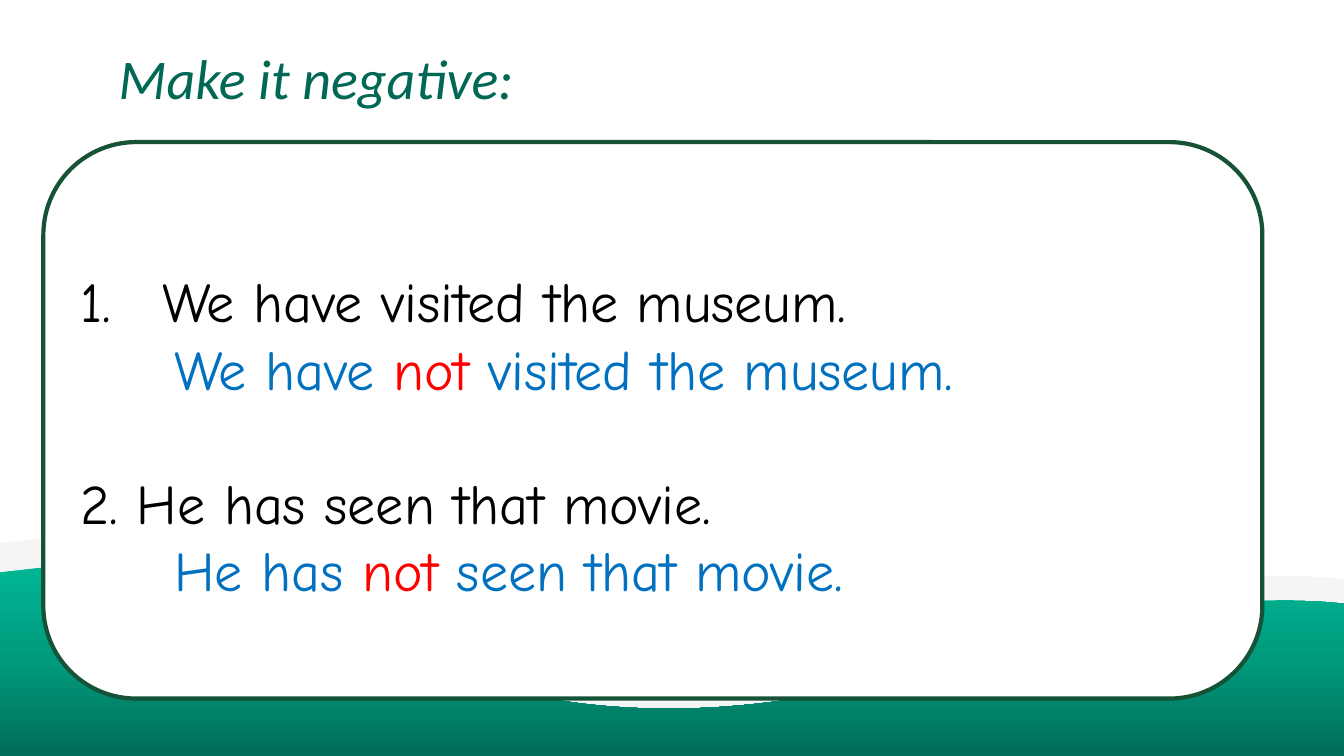
from lxml.etree import SubElement
from pptx import Presentation
from pptx.dml.color import RGBColor
from pptx.enum.shapes import MSO_SHAPE
from pptx.enum.text import MSO_ANCHOR, PP_ALIGN
from pptx.oxml import parse_xml
from pptx.oxml.ns import nsdecls, qn
from pptx.util import Inches, Pt

WIDTH, HEIGHT = 13.33, 7.5
BLACK, BLUE, RED, WHITE = "000000", "0070C0", "FF0000", "FFFFFF"
PALE, FRAME, HEADING_GREEN = "F5F5F5", "165235", "006854"
WAVE_GRADIENT = [(0, "00B895"), (50, "009B7E"), (100, "006D58")]

HEADING = "Make it negative:"
# runs, left margin, first-line indent, space before (pt), numbered
SENTENCES = [
    ([("We have visited the museum.", BLACK)], 0.81, -0.81, 0, True),
    ([("We have ", BLUE), ("not ", RED), ("visited the museum.", BLUE)], 0.93, 0, 0, False),
    ([("2. He has seen that movie.", BLACK)], 0, 0, 48, False),
    ([("He has ", BLUE), ("not", RED), (" seen that movie.", BLUE)], 0.93, 0, 0, False),
]

# bottom edge, height at the left side, then the Bezier points of the crest
PALE_WAVE = (7.46, 5.4, [(0.44, 5.35), (1.37, 5.27), (2.37, 5.37), (3.2, 5.91),
                         (5.41, 7.33), (7.64, 7.09), (9.75, 6.3),
                         (11.86, 5.52), (13.33, 5.76), (13.33, 5.76)])
GREEN_WAVE = (7.5, 5.68, [(0.44, 5.63), (1.37, 5.56), (2.37, 5.65), (3.2, 6.12),
                          (5.41, 7.38), (7.64, 7.17), (9.75, 6.47),
                          (11.86, 5.78), (13.33, 5.99), (13.33, 5.99)])


def color(hex_value):
    return RGBColor.from_string(hex_value)


def paint(shape, fill, line, width):
    shape.shadow.inherit = False
    shape.fill.solid()
    shape.fill.fore_color.rgb = color(fill)
    shape.line.color.rgb = color(line)
    shape.line.width = Pt(width)


def bend_crest(wave, corners):
    """Join the line segments after the first corners, three by three, into Bezier curves."""
    segments = list(wave._element.iter(qn("a:lnTo")))[corners:]
    for start in range(0, len(segments) - 2, 3):
        triple = segments[start:start + 3]
        curve = parse_xml(f'<a:cubicBezTo {nsdecls("a")}/>')
        triple[0].addprevious(curve)
        for segment in triple:
            curve.append(segment[0])
            segment.getparent().remove(segment)


def add_wave(slide, bottom, left_top, crest):
    outline = [(WIDTH, bottom), (0, bottom), (0, left_top)] + crest
    points = [(Inches(x), Inches(y)) for x, y in outline]
    builder = slide.shapes.build_freeform(*points[0], scale=1.0)
    builder.add_line_segments(points[1:], close=True)
    wave = builder.convert_to_shape()
    bend_crest(wave, corners=3)
    paint(wave, PALE, PALE, 1.62)
    return wave


def fill_gradient(shape, stops):
    stop_xml = "".join(f'<a:gs pos="{pos * 1000}"><a:srgbClr val="{value}"/></a:gs>'
                       for pos, value in stops)
    gradient = parse_xml(f'<a:gradFill {nsdecls("a")} rotWithShape="1"><a:gsLst>{stop_xml}'
                         '</a:gsLst><a:lin ang="5400000" scaled="0"/></a:gradFill>')
    properties = shape.fill._xPr
    properties.replace(properties.find(qn("a:solidFill")), gradient)


def add_sentence(paragraph, runs, margin, indent, space_before, numbered):
    paragraph.alignment = PP_ALIGN.LEFT
    paragraph.space_before = Pt(space_before)
    paragraph.font.size = Pt(40)
    paragraph.font.name = "Comic Neue"
    for text, hue in runs:
        run = paragraph.add_run()
        run.text = text
        run.font.color.rgb = color(hue)
    properties = paragraph._p.get_or_add_pPr()
    properties.set("marL", str(Inches(margin)))
    properties.set("indent", str(Inches(indent)))
    if numbered:
        number = SubElement(properties, qn("a:buAutoNum"), type="arabicPeriod")
        properties.find(qn("a:defRPr")).addprevious(number)


def add_card(slide):
    card = slide.shapes.add_shape(MSO_SHAPE.ROUNDED_RECTANGLE, Inches(0.43), Inches(1.41),
                                  Inches(12.09), Inches(5.52))
    paint(card, WHITE, FRAME, 3)
    frame = card.text_frame
    frame.word_wrap = True
    frame.vertical_anchor = MSO_ANCHOR.MIDDLE
    frame.margin_top = Inches(0.34)
    for index, sentence in enumerate(SENTENCES):
        add_sentence(frame.add_paragraph() if index else frame.paragraphs[0], *sentence)


def add_heading(slide):
    heading = slide.shapes.add_shape(MSO_SHAPE.RECTANGLE, Inches(1.02), Inches(0.36),
                                     Inches(4.23), Inches(0.81))
    paint(heading, WHITE, WHITE, 0.5)
    frame = heading.text_frame
    frame.word_wrap = False
    frame.vertical_anchor = MSO_ANCHOR.TOP
    frame.margin_left = frame.margin_right = Inches(0.13)
    frame.margin_top = frame.margin_bottom = Inches(0.07)
    paragraph = frame.paragraphs[0]
    paragraph.text = HEADING
    paragraph.alignment = PP_ALIGN.CENTER
    font = paragraph.font
    font.name, font.size, font.italic = "Calibri", Pt(40), True
    font.color.rgb = color(HEADING_GREEN)


def main():
    presentation = Presentation()
    presentation.slide_width = Inches(WIDTH)
    presentation.slide_height = Inches(HEIGHT)
    slide = presentation.slides.add_slide(presentation.slide_layouts[6])
    add_wave(slide, *PALE_WAVE)
    green_wave = add_wave(slide, *GREEN_WAVE)
    fill_gradient(green_wave, WAVE_GRADIENT)
    green_wave.line.fill.background()
    add_card(slide)
    add_heading(slide)
    presentation.save("out.pptx")


if __name__ == "__main__":
    main()
